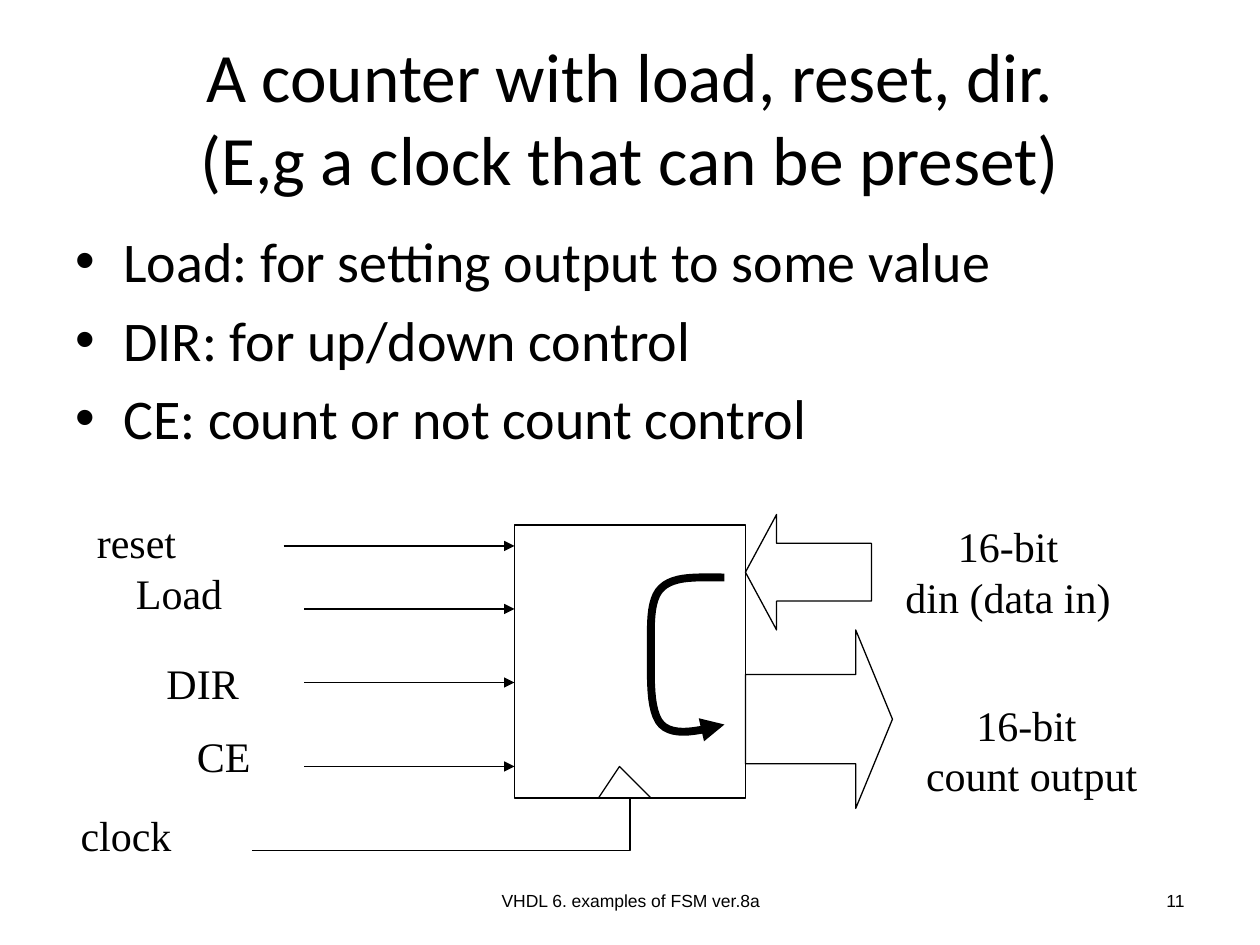
"""Build the slide about a loadable up/down counter and its block diagram."""
from lxml import etree
from pptx import Presentation
from pptx.dml.color import RGBColor
from pptx.enum.shapes import MSO_CONNECTOR, MSO_SHAPE
from pptx.enum.text import MSO_ANCHOR, MSO_AUTO_SIZE, PP_ALIGN
from pptx.oxml.ns import qn
from pptx.util import Inches, Pt

STRAIGHT = MSO_CONNECTOR.STRAIGHT
RECTANGLE, LEFT_ARROW, RIGHT_ARROW = MSO_SHAPE.RECTANGLE, MSO_SHAPE.LEFT_ARROW, MSO_SHAPE.RIGHT_ARROW
TOP, MIDDLE = MSO_ANCHOR.TOP, MSO_ANCHOR.MIDDLE
FIXED, GROW = MSO_AUTO_SIZE.NONE, MSO_AUTO_SIZE.SHAPE_TO_FIT_TEXT
LEFT, CENTER, RIGHT = PP_ALIGN.LEFT, PP_ALIGN.CENTER, PP_ALIGN.RIGHT
BLACK = "000000"
TITLE_ONLY = 5
COLUMNS = 120

deck = Presentation()
deck.slide_width, deck.slide_height = Inches(10), Inches(7.5)
page = deck.slides.add_slide(deck.slide_layouts[TITLE_ONLY])
shapes = page.shapes
CELL = deck.slide_width / COLUMNS


def write(box, text, font="Times New Roman", size=24, align=CENTER, anchor=TOP,
          wrap=True, bullet=None, before=0, color=BLACK):
    frame = box.text_frame
    frame.text = text
    frame.word_wrap, frame.vertical_anchor = wrap, anchor
    frame.auto_size = FIXED if wrap else GROW
    for para in frame.paragraphs:
        para.alignment, para.space_before = align, Pt(before)
        if bullet:
            properties = para._p.get_or_add_pPr()
            properties.set("marL", str(Inches(0.38)))
            properties.set("indent", str(-Inches(0.38)))
            etree.SubElement(properties, qn("a:buFont")).set("typeface", "Arial")
            etree.SubElement(properties, qn("a:buChar")).set("char", bullet)
        for span in para.runs:
            span.font.name, span.font.size = font, Pt(size)
            span.font.color.rgb = RGBColor.from_string(color)


def outline(shape, weight=0.75, arrow=False, color=BLACK):
    shape.line.color.rgb = RGBColor.from_string(color)
    shape.line.width = Pt(weight)
    properties = shape._element.spPr
    if arrow:
        etree.SubElement(properties.find(qn("a:ln")), qn("a:tailEnd")).set("type", "triangle")
    etree.SubElement(properties, qn("a:effectLst"))


title = shapes.title
title.left, title.top, title.width, title.height = Inches(0.5), Inches(0.3), Inches(9), Inches(1.25)
write(title, "A counter with load, reset, dir.\v(E,g a clock that can be preset)",
      font="Calibri", size=39.6, anchor=MIDDLE)

points = shapes.add_textbox(Inches(0.5), Inches(1.75), Inches(9), Inches(4.95))
write(points, "Load: for setting output to some value\nDIR: for up/down control\n"
      "CE: count or not count control", font="Calibri", size=32, align=LEFT, bullet="•", before=6.4)

for text, left, width, align in [
    ("VHDL 6. examples of FSM ver.8a", 3.42, 3.17, CENTER),
    ("11", 7.17, 2.33, RIGHT),
]:
    footer = shapes.add_textbox(Inches(left), Inches(6.95), Inches(width), Inches(0.4))
    write(footer, text, font="Arial", size=10, align=align, anchor=MIDDLE)

for kind, column, row, columns, rows, adjustments in [
    (RECTANGLE, 49, 50, 22, 26, []),
    (RIGHT_ARROW, 71, 60, 14, 17, [0.5, 0.25]),
    (LEFT_ARROW, 71, 49, 12, 11, [0.5, 0.27]),
]:
    block = shapes.add_shape(kind, *(round(n * CELL) for n in (column, row, columns, rows)))
    for index, value in enumerate(adjustments):
        block.adjustments[index] = value
    block.fill.background()
    outline(block)

for column, row in [(27, 52), (29, 58), (29, 65), (29, 73)]:
    signal = shapes.add_connector(STRAIGHT, *(round(n * CELL) for n in (column, row, 49, row)))
    outline(signal, arrow=True)

for text, column, row, columns, rows in [
    ("reset", 8, 48.6, 10, 6),
    ("Load", 11.7, 53.5, 10.7, 6),
    ("DIR", 14.6, 62, 9.4, 6),
    ("CE", 17.5, 69, 7.6, 6),
    ("clock", 6, 76.5, 12, 6),
    ("16-bit\ndin (data in)", 85, 49, 22, 10.8),
    ("16-bit \ncount output", 87, 66, 22.5, 10.8),
]:
    label = shapes.add_textbox(*(round(n * CELL) for n in (column, row, columns, rows)))
    write(label, text, wrap=False)

STEPS = 12
loop = [(69, 55)]
for first, second, end in [
    ((66.6, 55), (64.2, 54.8), (63, 56)),
    ((61.8, 57.1), (62, 59.9), (62, 62)),
    ((62, 64.2), (61.8, 67.8), (63, 69)),
    ((64.2, 70.2), (66.6, 69.6), (69, 69)),
]:
    start = loop[-1]
    for step in range(1, STEPS + 1):
        t = step / STEPS
        u = 1 - t
        loop.append(tuple(u**3 * a + 3 * u * u * t * b + 3 * u * t * t * c + t**3 * d
                          for a, b, c, d in zip(start, first, second, end)))

for route, weight, arrow in [
    ([(57, 76), (59, 73), (62, 76)], 0.75, False),
    ([(24, 81), (60, 81), (60, 76)], 0.75, False),
    (loop, 4.5, True),
]:
    corners = [(x * CELL, y * CELL) for x, y in route]
    builder = shapes.build_freeform(*corners[0])
    builder.add_line_segments(corners[1:], close=False)
    curve = builder.convert_to_shape()
    curve.fill.background()
    outline(curve, weight, arrow)

deck.save("out.pptx")
